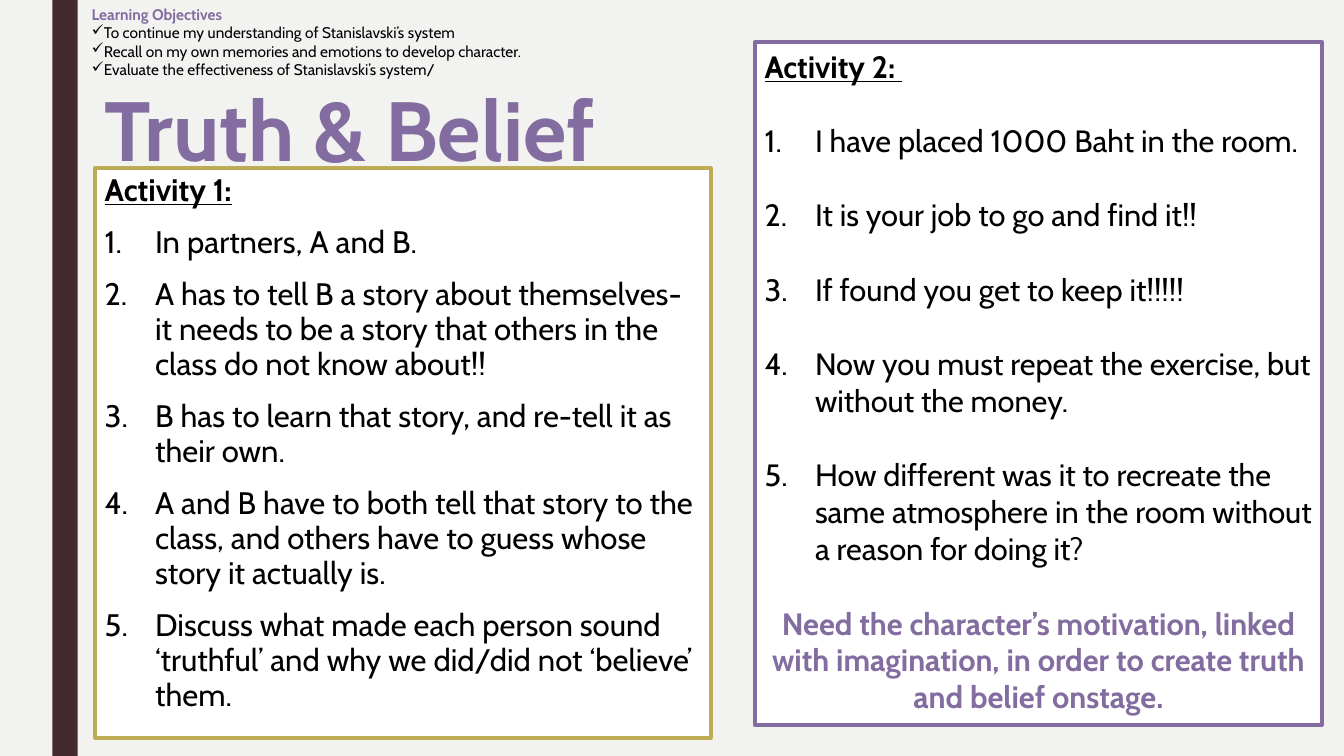
from lxml import etree
from pptx import Presentation
from pptx.dml.color import RGBColor
from pptx.enum import shapes, text
from pptx.oxml.ns import qn
from pptx.util import Cm, Pt

FONT = "Cabin"
PAPER = RGBColor(0xF2, 0xF2, 0xF0)
PLUM = RGBColor(0x43, 0x2A, 0x30)
PURPLE = RGBColor(0x83, 0x6C, 0x9F)
GOLD = RGBColor(0xBD, 0xAB, 0x56)
WHITE = RGBColor(0xFF, 0xFF, 0xFF)
BLACK = RGBColor(0, 0, 0)

OBJECTIVES = [
    "To continue my understanding of Stanislavski’s system",
    "Recall on my own memories and emotions to develop character.",
    "Evaluate the effectiveness of Stanislavski’s system/",
]
STORY_STEPS = [
    "In partners, A and B.",
    "A has to tell B a story about themselves- it needs to be a story that "
    "others in the class do not know about!!",
    "B has to learn that story, and re-tell it as their own.",
    "A and B have to both tell that story to the class, and others have to "
    "guess whose story it actually is.",
    "Discuss what made each person sound ‘truthful’ and why we did/did not "
    "‘believe’ them.",
]
MONEY_STEPS = [
    "I have placed 1000 Baht in the room.",
    "It is your job to go and find it!!",
    "If found you get to keep it!!!!!",
    "Now you must repeat the exercise, but without the money.",
    "How different was it to recreate the same atmosphere in the room "
    "without a reason for doing it?",
]
MOTIVATION = ("Need the character’s motivation, linked with imagination, "
              "in order to create truth and belief onstage.")


def write(p, words, size, color=BLACK, bold=False, underline=False,
          align=text.PP_ALIGN.LEFT):
    p.text = words
    p.alignment = align
    for r in p.runs:
        f = r.font
        f.name, f.size, f.bold, f.underline = FONT, Pt(size), bold, underline
        f.color.rgb = color


def add_bullet(p, tag, indent=0, **attrs):
    pPr = p._p.get_or_add_pPr()
    pPr.set("marL", str(indent))
    pPr.set("indent", str(-indent))
    etree.SubElement(pPr, qn(tag), attrs)


def add_rect(s, box, fill):
    sp = s.shapes.add_shape(shapes.MSO_SHAPE.RECTANGLE, *map(Cm, box))
    sp.shadow.inherit = False
    sp.fill.solid()
    sp.fill.fore_color.rgb = fill
    sp.line.fill.background()
    return sp


def add_title(s, box):
    sp = s.shapes.title
    sp.left, sp.top, sp.width, sp.height = map(Cm, box)
    tf = sp.text_frame
    tf.auto_size = text.MSO_AUTO_SIZE.NONE
    tf.vertical_anchor = text.MSO_ANCHOR.TOP
    p = tf.paragraphs[0]
    write(p, "Truth & Belief", 60, PURPLE, bold=True, underline=True)
    p.line_spacing = 0.89


def add_objectives(s, box):
    tf = s.shapes.add_textbox(*map(Cm, box)).text_frame
    tf.word_wrap = True
    write(tf.paragraphs[0], "Learning Objectives", 11, PURPLE, bold=True)
    for objective in OBJECTIVES:
        p = tf.add_paragraph()
        add_bullet(p, "a:buChar", char="✓")
        write(p, objective, 11)


def add_activity(s, box, heading, steps, color, size, spacing, before, after,
                 closing=None):
    sp = add_rect(s, box, WHITE)
    sp.line.color.rgb = color
    sp.line.width = Pt(2.75)
    tf = sp.text_frame
    tf.word_wrap = True
    tf.vertical_anchor = text.MSO_ANCHOR.TOP

    # Heading, numbered steps and closing remark
    write(tf.paragraphs[0], heading, size, bold=True, underline=True)
    for step in steps:
        p = tf.add_paragraph()
        add_bullet(p, "a:buAutoNum", Cm(1.27), type="arabicPeriod")
        write(p, step, size)
    if closing:
        write(tf.add_paragraph(), closing, size, PURPLE, bold=True,
              align=text.PP_ALIGN.CENTER)

    for i, p in enumerate(tf.paragraphs):
        p.line_spacing = spacing
        p.space_before = Pt(before if i else 0)
        p.space_after = Pt(after)


def main():
    prs = Presentation()
    prs.slide_width, prs.slide_height = Cm(33.87), Cm(19.05)
    s = prs.slides.add_slide(prs.slide_layouts[5])
    s.background.fill.solid()
    s.background.fill.fore_color.rgb = PAPER

    # Side band and headings
    add_rect(s, (1.32, 0, 0.64, 19.05), PLUM)
    add_title(s, (2.39, 2.13, 27.79, 2.11))
    add_objectives(s, (2.06, 0, 32.31, 2.13))

    # Activities
    add_activity(s, (2.39, 4.24, 15.52, 14.35), "Activity 1:", STORY_STEPS,
                 GOLD, 22.2, spacing=0.94, before=10, after=2)
    add_activity(s, (19.02, 1.07, 14.3, 17.2), "Activity 2: ", MONEY_STEPS,
                 PURPLE, 22, spacing=1.0, before=26.7, after=0,
                 closing=MOTIVATION)
    prs.save("out.pptx")


if __name__ == "__main__":
    main()
